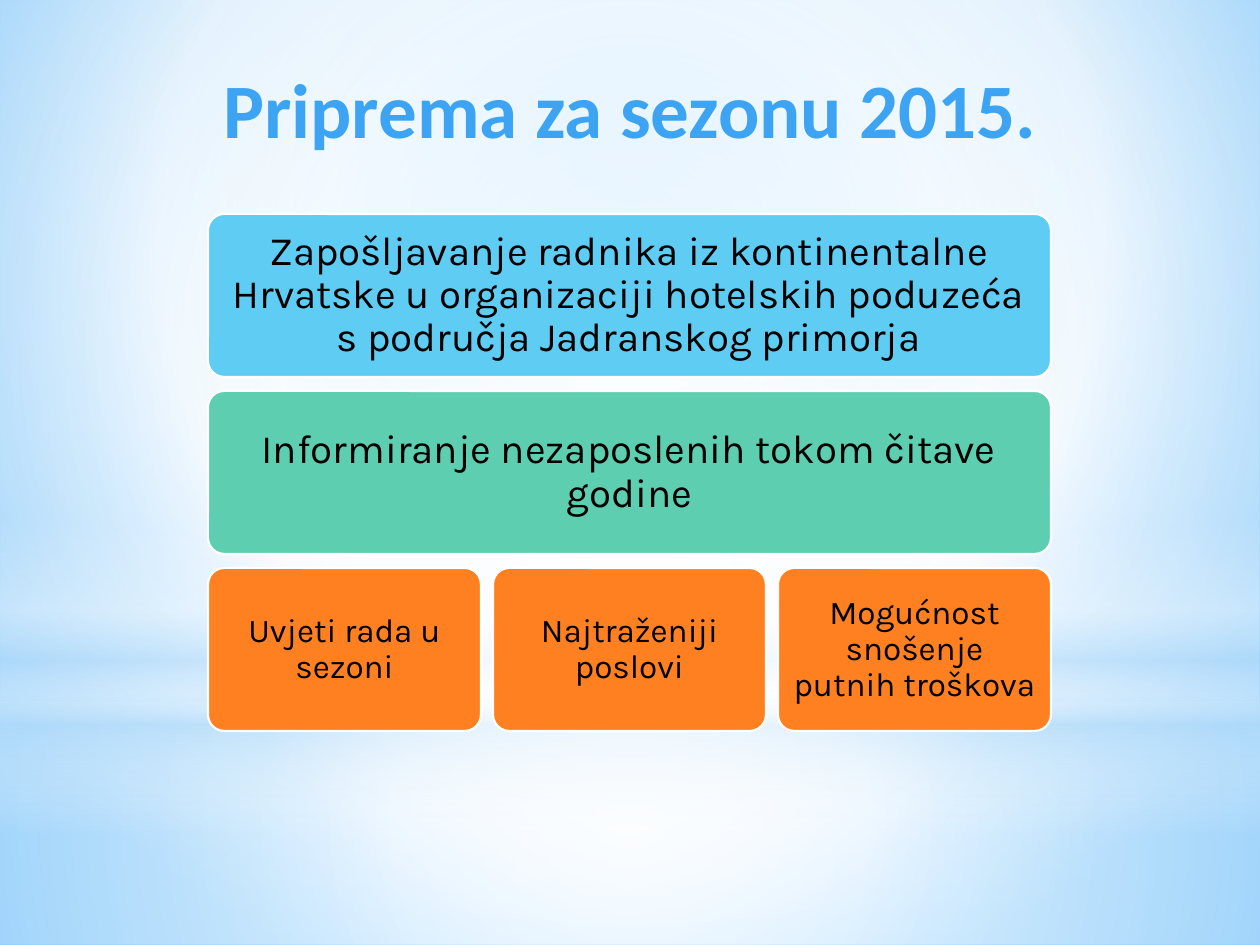
from lxml.etree import SubElement
from pptx import Presentation
from pptx.dml.color import RGBColor
from pptx.enum.shapes import MSO_SHAPE
from pptx.enum.text import MSO_ANCHOR, PP_ALIGN
from pptx.oxml import parse_xml
from pptx.oxml.ns import nsdecls, qn
from pptx.util import Emu, Pt

SCALE = 914400 / 126
WIDE, HIGH = 1260, 945

WHITE = RGBColor(0xFF, 0xFF, 0xFF)
BLACK = RGBColor(0x00, 0x00, 0x00)
PALE = RGBColor(0xB4, 0xDC, 0xFA)
LIGHT = RGBColor(0x9E, 0xD5, 0xFF)
DEEP = RGBColor(0x5B, 0xB9, 0xFF)
TITLE = RGBColor(0x3C, 0xA4, 0xF2)
SKY = RGBColor(0x5E, 0xCC, 0xF3)
GREEN = RGBColor(0x5D, 0xCE, 0xAF)
ORANGE = RGBColor(0xFF, 0x80, 0x21)

LEFT, TOP, SPAN, TALL = 208, 214, 843, 163
ROW_GAP, COL_GAP = 14, 12
ROWS = [
    (SKY, 23, 13, ["Zapošljavanje radnika iz kontinentalne Hrvatske u organizaciji "
                   "hotelskih poduzeća s područja Jadranskog primorja"]),
    (GREEN, 23, 13, ["Informiranje nezaposlenih tokom čitave godine"]),
    (ORANGE, 19, 10, ["Uvjeti rada u sezoni", "Najtraženiji poslovi",
                      "Mogućnost snošenje putnih troškova"]),
]


def px(n):
    return Emu(round(n * SCALE))


def blend(fill, owner, stops, focus=None):
    """Give owner a gradient of (place, colour, alpha) stops in percent.

    With a focus (left, top, right, bottom) it is radial, else it runs down.
    """
    fill.solid()
    grad = parse_xml(f'<a:gradFill {nsdecls("a")} rotWithShape="1"/>')
    items = SubElement(grad, qn("a:gsLst"))
    for place, color, alpha in stops:
        stop = SubElement(items, qn("a:gs"), pos=str(place * 1000))
        tint = SubElement(stop, qn("a:srgbClr"), val=str(color))
        if alpha < 100:
            SubElement(tint, qn("a:alpha"), val=str(alpha * 1000))
    if focus:
        route = SubElement(grad, qn("a:path"), path="circle")
        sides = {side: str(n * 1000) for side, n in zip("ltrb", focus)}
        SubElement(route, qn("a:fillToRect"), **sides)
    else:
        SubElement(grad, qn("a:lin"), ang="5400000", scaled="0")
    owner.replace(owner.find(qn("a:solidFill")), grad)


def add_form(slide, kind, x, y, w, h):
    form = slide.shapes.add_shape(kind, px(x), px(y), px(w), px(h))
    form.shadow.inherit = False
    return form


def add_glow(slide, kind, y, h, stops, focus=None):
    glow = add_form(slide, kind, 0, y, WIDE, h)
    glow.line.fill.background()
    blend(glow.fill, glow._element.spPr, stops, focus)


def write(frame, text, *, size, font, color, bold=False, space=1.0):
    frame.word_wrap = True
    para = frame.paragraphs[0]
    para.alignment = PP_ALIGN.CENTER
    para.line_spacing = space
    run = para.add_run()
    run.text = text
    run.font.size = Pt(size)
    run.font.name = font
    run.font.bold = bold
    run.font.color.rgb = color


def add_card(slide, x, y, w, text, color, size, inset):
    card = add_form(slide, MSO_SHAPE.ROUNDED_RECTANGLE, x, y, w, TALL)
    card.adjustments[0] = 0.1
    card.fill.solid()
    card.fill.fore_color.rgb = color
    card.line.color.rgb = WHITE
    card.line.width = Pt(1.25)
    frame = card.text_frame
    frame.vertical_anchor = MSO_ANCHOR.MIDDLE
    frame.margin_left = frame.margin_right = px(inset)
    frame.margin_top = frame.margin_bottom = px(inset)
    write(frame, text, size=size, font="Karla", color=BLACK, space=0.9)


def add_scene(slide):
    """Draw the soft blue backdrop."""
    back = slide.background.fill
    back.solid()
    blend(back, slide._element.cSld.bg.bgPr,
          [(0, LIGHT, 100), (60, WHITE, 100), (100, DEEP, 100)],
          (20, 10, 20, 60))
    mid = (50, 50, 50, 50)
    rect = MSO_SHAPE.RECTANGLE
    add_glow(slide, rect, 703, 242,
             [(0, WHITE, 91), (37, WHITE, 76), (100, PALE, 79)], mid)
    add_glow(slide, rect, 0, 703,
             [(0, WHITE, 89), (48, WHITE, 62), (100, PALE, 79)], mid)
    add_glow(slide, rect, 519, 315,
             [(0, WHITE, 0), (29, WHITE, 30), (45, PALE, 40),
              (55, WHITE, 26), (65, PALE, 60), (100, WHITE, 0)])
    add_glow(slide, MSO_SHAPE.OVAL, 221, 703,
             [(0, WHITE, 100), (56, WHITE, 0)], mid)


def add_title(slide, text):
    box = slide.shapes.add_textbox(px(95), px(55), px(1071), px(97))
    write(box.text_frame, text, size=44, font="Calibri", color=TITLE, bold=True)


def main():
    deck = Presentation()
    deck.slide_width, deck.slide_height = px(WIDE), px(HIGH)
    slide = deck.slides.add_slide(deck.slide_layouts[6])
    add_scene(slide)
    add_title(slide, "Priprema za sezonu 2015.")
    for row, (color, size, inset, texts) in enumerate(ROWS):
        y = TOP + row * (TALL + ROW_GAP)
        w = (SPAN - COL_GAP * (len(texts) - 1)) // len(texts)
        for col, text in enumerate(texts):
            x = LEFT + col * (w + COL_GAP)
            add_card(slide, x, y, w, text, color, size, inset)
    deck.save("out.pptx")


if __name__ == "__main__":
    main()
